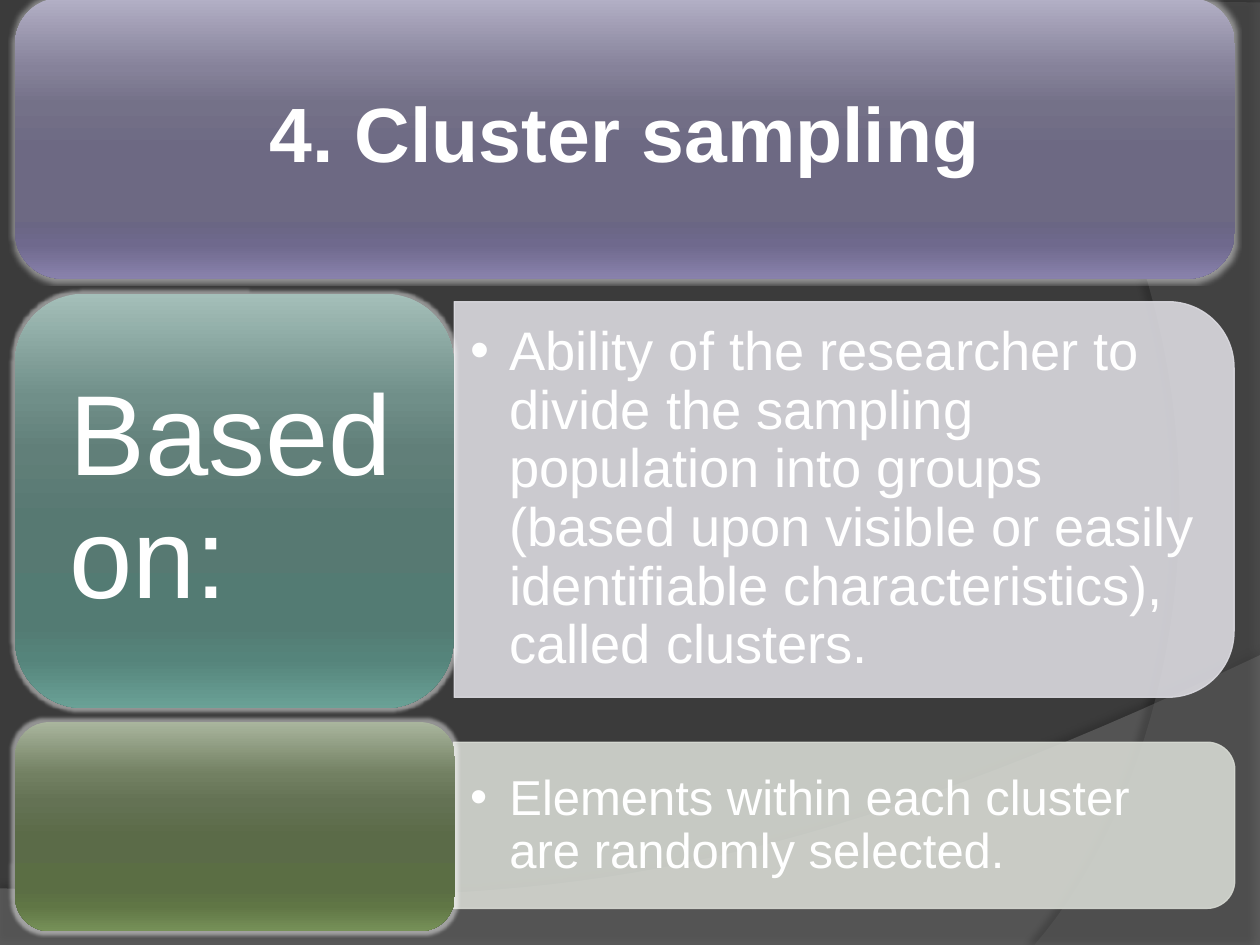
import pptx
import pptx.dml.color
import pptx.enum.shapes
import pptx.enum.text
import pptx.oxml
import pptx.oxml.ns
import pptx.util
from dataclasses import dataclass

Pt = pptx.util.Pt
SHAPES = pptx.enum.shapes.MSO_SHAPE
ALIGN = pptx.enum.text.PP_ALIGN


@dataclass(frozen=True)
class Theme:
    font: str = "Arial"
    text: str = "FFFFFF"
    background: str = "3B3B3B"
    glow: str = "FFFFFF"
    shadow: str = "000000"
    title_size: int = 44
    label_size: int = 65
    stops: tuple = (0, 25, 38, 55, 80, 88, 100)
    purple: tuple = ("B3B0C6", "86829A", "747188", "6D6983", "6A6684", "6F698D", "8982AC")
    teal: tuple = ("A4BFB9", "708F89", "617F79", "577972", "537B73", "55847B", "6AA196")
    green: tuple = ("A9B59D", "728062", "647254", "5B6B48", "5B6E44", "607645", "769058")


THEME = Theme()

# Boxes are left, top, width, height in points.
TITLE = {"text": "4. Cluster sampling", "card": (8.6, -1.4, 697, 160.6),
         "box": (16.6, 6.5, 681, 144.7)}
LABEL = {"text": "Based on:", "box": (20.2, 179.3, 227.5, 213.1)}
ROWS = [
    {"text": "Ability of the researcher to divide the sampling population into groups "
             "(based upon visible or easily identifiable characteristics), called clusters.",
     "size": 31, "box": (259.2, 183.6, 434.9, 203.8),
     "panel": (259.5, 172.4, 445.7, 226.1), "panel_color": "DBDAE0",
     "card": (8.6, 167.8, 250.6, 236.9), "card_colors": THEME.teal},
    {"text": "Elements within each cluster are randomly selected.",
     "size": 28, "box": (259.2, 429.1, 441.4, 85.7),
     "panel": (259.2, 424.1, 446.4, 95), "panel_color": "D6D9D2",
     "card": (8.6, 412.6, 251.3, 119.5), "card_colors": THEME.green},
]
# Each swoosh has straight corners, then a Bezier curve from the last corner.
SWOOSHES = [
    {"corners": [(0, 507.6), (0, 540), (720, 540), (720, 374.4)],
     "curve": [(402.5, 524.9), (281.5, 517.7), (0, 507.6)],
     "color": "7F7F7F", "opacity": 45, "shadow_opacity": 35, "distance": 3.5, "angle": 270},
    {"corners": [(720, 1.4), (720, 540), (591.1, 540)],
     "curve": [(673.2, 445.7), (733, 216), (576, 0)],
     "color": "5E5E5E", "opacity": 40, "shadow_opacity": 45, "distance": 4, "angle": 180},
]


def rgb(color):
    return pptx.dml.color.RGBColor.from_string(color)


def xml(markup):
    """Parse one DrawingML element written without its namespace declaration."""
    tag, rest = markup.split(" ", 1)
    return pptx.oxml.parse_xml(f"{tag} {pptx.oxml.ns.nsdecls('a')} {rest}")


def color_markup(color, opacity=100):
    return f'<a:srgbClr val="{color}"><a:alpha val="{opacity * 1000}"/></a:srgbClr>'


def set_effect(shape, markup):
    shape.shadow.inherit = False
    effects = shape.element.spPr.find(pptx.oxml.ns.qn("a:effectLst"))
    effects.append(xml(markup))


def fill_solid(fill, color, opacity):
    fill.solid()
    fill.fore_color.rgb = rgb(color)
    solid = fill.fore_color._xFill.srgbClr
    solid.append(xml(f'<a:alpha val="{opacity * 1000}"/>'))


def add_swoosh(slide, swoosh, steps=40):
    start, (p1, p2, end) = swoosh["corners"][-1], swoosh["curve"]
    curve = []
    for step in range(1, steps + 1):
        t = step / steps
        weights = ((1 - t) ** 3, 3 * t * (1 - t) ** 2, 3 * t * t * (1 - t), t ** 3)
        curve.append(tuple(sum(w * p[axis] for w, p in zip(weights, (start, p1, p2, end)))
                           for axis in (0, 1)))
    first, *others = [(Pt(x), Pt(y)) for x, y in swoosh["corners"] + curve]
    builder = slide.shapes.build_freeform(*first)
    builder.add_line_segments(others, close=True)
    shape = builder.convert_to_shape()
    fill_solid(shape.fill, swoosh["color"], swoosh["opacity"])
    shape.line.fill.background()
    set_effect(shape, f'<a:outerShdw blurRad="{Pt(4)}" dist="{Pt(swoosh["distance"])}" '
                      f'dir="{swoosh["angle"] * 60000}">'
                      f'{color_markup(THEME.shadow, swoosh["shadow_opacity"])}</a:outerShdw>')


def add_card(slide, box, colors):
    card = slide.shapes.add_shape(SHAPES.ROUNDED_RECTANGLE, *map(Pt, box))
    card.fill.gradient()
    card.fill.gradient_angle = 270
    stops = card.element.spPr.find(".//" + pptx.oxml.ns.qn("a:gsLst"))
    for stop in list(stops):
        stops.remove(stop)
    for position, color in zip(THEME.stops, colors):
        stops.append(xml(f'<a:gs pos="{position * 1000}">{color_markup(color)}</a:gs>'))
    card.line.fill.background()
    set_effect(card, f'<a:glow rad="{Pt(4)}">{color_markup(THEME.glow, 45)}</a:glow>')


def add_panel(slide, box, color):
    """Add a panel rounded on its right side: a top-rounded shape turned by 90 degrees."""
    left, top, width, height = box
    shift = (width - height) / 2
    panel = slide.shapes.add_shape(SHAPES.ROUND_2_SAME_RECTANGLE, Pt(left + shift),
                                   Pt(top - shift), Pt(height), Pt(width))
    panel.rotation = 90
    panel.shadow.inherit = False
    fill_solid(panel.fill, color, 90)
    panel.line.width = Pt(0.75)
    fill_solid(panel.line.fill, color, 90)


def write(shape, text, box, size, insets, align=ALIGN.LEFT, bold=False, indent=0):
    """Place a text shape in front of all others and give it one paragraph."""
    shape.left, shape.top, shape.width, shape.height = map(Pt, box)
    shape.element.getparent().append(shape.element)
    frame = shape.text_frame
    frame.word_wrap = True
    frame.auto_size = pptx.enum.text.MSO_AUTO_SIZE.NONE
    frame.vertical_anchor = pptx.enum.text.MSO_ANCHOR.MIDDLE
    frame.margin_left = frame.margin_right = Pt(insets[0])
    frame.margin_top = frame.margin_bottom = Pt(insets[1])
    frame.text = text
    paragraph = frame.paragraphs[0]
    if indent:
        properties = paragraph._p.get_or_add_pPr()
        properties.set("marL", str(Pt(indent)))
        properties.set("indent", str(-Pt(indent)))
        properties.append(xml('<a:buChar char="•"/>'))
    paragraph.alignment = align
    paragraph.line_spacing = 0.9
    paragraph.space_before = Pt(0)
    font = paragraph.font
    font.name, font.size, font.bold = THEME.font, Pt(size), bold
    font.color.rgb = rgb(THEME.text)


def main():
    presentation = pptx.Presentation()
    presentation.slide_width, presentation.slide_height = Pt(720), Pt(540)
    slide = presentation.slides.add_slide(presentation.slide_layouts.get_by_name("Two Content"))
    slide.background.fill.solid()
    slide.background.fill.fore_color.rgb = rgb(THEME.background)
    title, *bodies = slide.placeholders

    for swoosh in SWOOSHES:
        add_swoosh(slide, swoosh)
    add_card(slide, TITLE["card"], THEME.purple)
    write(title, TITLE["text"], TITLE["box"], THEME.title_size, (13, 6.5), ALIGN.CENTER, True)
    for row, body in zip(ROWS, bodies):
        add_panel(slide, row["panel"], row["panel_color"])
        add_card(slide, row["card"], row["card_colors"])
        write(body, row["text"], row["box"], row["size"], (9.4, 4.3), indent=22.5)
    label = slide.shapes.add_textbox(*map(Pt, LABEL["box"]))
    write(label, LABEL["text"], LABEL["box"], THEME.label_size, (19.4, 10))
    presentation.save("out.pptx")


if __name__ == "__main__":
    main()
